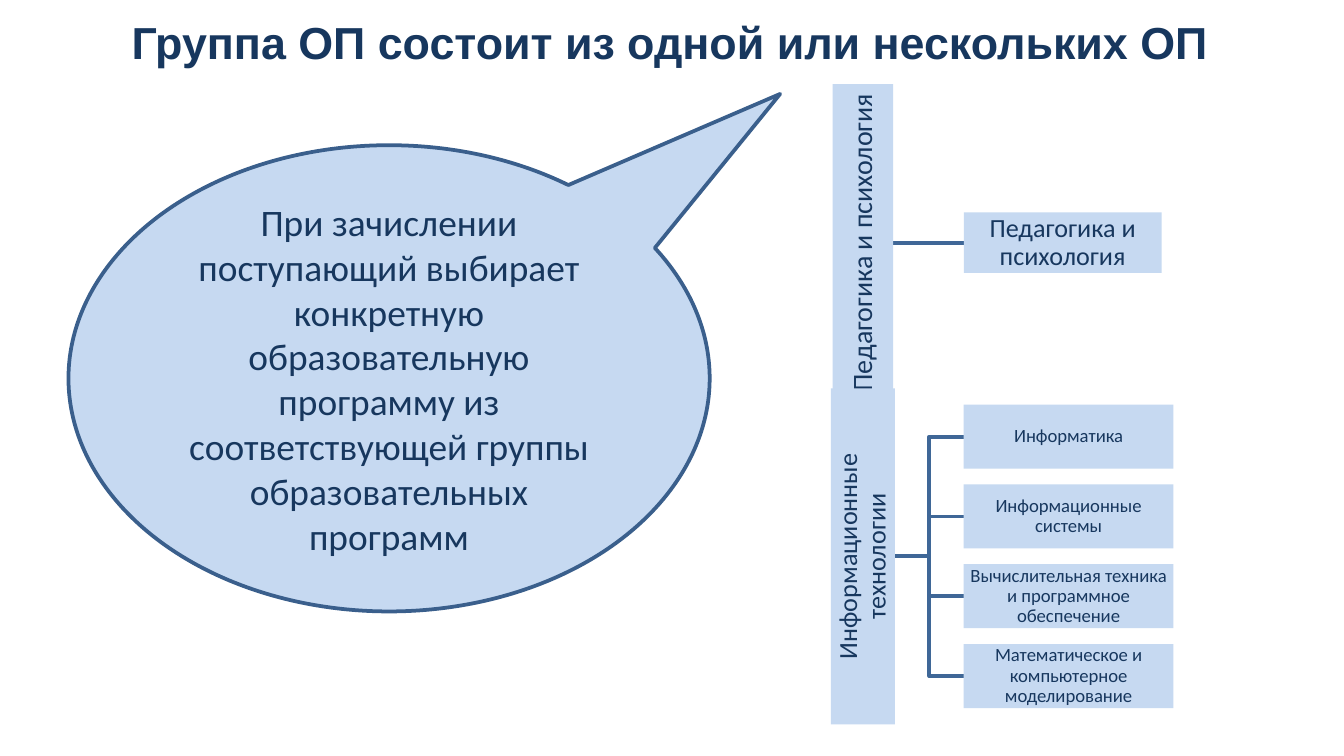
import pptx
import pptx.util
import pptx.dml.color
import pptx.enum.shapes
import pptx.enum.text
import pptx.oxml

Pt = pptx.util.Pt
RGBColor = pptx.dml.color.RGBColor
SHAPE = pptx.enum.shapes.MSO_SHAPE
LINK = pptx.enum.shapes.MSO_CONNECTOR
ALIGN = pptx.enum.text.PP_ALIGN

NAVY = RGBColor(0x17, 0x37, 0x5E)
PALE = RGBColor(0xC6, 0xD9, 0xF1)
WHITE = RGBColor(0xFF, 0xFF, 0xFF)
LINK_BLUE = RGBColor(0x3F, 0x67, 0x97)
OUTLINE = RGBColor(0x3A, 0x5F, 0x8C)

TITLE = "Группа ОП состоит из одной или нескольких ОП"
CALLOUT = ("При зачислении поступающий выбирает конкретную образовательную "
           "программу из соответствующей группы образовательных программ")
GROUPS = [
    {"name": "Педагогика и психология", "size": 15, "length": 170,
     "center": 130, "box": (106, 32.4), "program_size": 14,
     "programs": ["Педагогика и психология"]},
    {"name": "Информационные технологии", "size": 14, "length": 180,
     "center": 298.1, "box": (112.3, 34.3), "program_size": 10,
     "programs": ["Информатика", "Информационные системы",
                  "Вычислительная техника и программное обеспечение",
                  "Математическое и компьютерное моделирование"]},
]
GROUP_X = 462.3
PROGRAM_X = 516.3
PITCH = 42.75


def add_text_shape(s, kind, box, text, size, fill, font="Calibri",
                   insets=(0.7, 0.7), align=ALIGN.CENTER, spacing=1.0):
    sp = s.shapes.add_shape(kind, *map(Pt, box))
    sp.shadow.inherit = False
    sp.fill.solid()
    sp.fill.fore_color.rgb = fill
    sp.line.fill.background()
    tf = sp.text_frame
    tf.word_wrap = True
    tf.vertical_anchor = pptx.enum.text.MSO_ANCHOR.MIDDLE
    tf.margin_left = tf.margin_right = Pt(insets[0])
    tf.margin_top = tf.margin_bottom = Pt(insets[1])
    tf.text = text
    p = tf.paragraphs[0]
    p.alignment = align
    p.line_spacing = spacing
    r = p.runs[0]
    r.font.name = font
    r.font.size = Pt(size)
    r.font.color.rgb = NAVY
    return sp


def add_link(s, x1, y1, x2, y2):
    kind = LINK.STRAIGHT if y1 == y2 else LINK.ELBOW
    cx = s.shapes.add_connector(kind, Pt(x1), Pt(y1), Pt(x2), Pt(y2))
    cx.line.color.rgb = LINK_BLUE
    cx.line.width = Pt(2)
    cx._element.spPr.append(pptx.oxml.parse_xml(
        '<a:effectLst xmlns:a="http://schemas.openxmlformats.org/drawingml/2006/main"/>'))


def add_group(s, group):
    w, h = group["box"]
    length, center = group["length"], group["center"]
    count = len(group["programs"])
    middles = [center + (i - (count - 1) / 2) * PITCH for i in range(count)]
    for y in middles:
        add_link(s, GROUP_X + h / 2, center, PROGRAM_X, y)
    sp = add_text_shape(s, SHAPE.RECTANGLE,
                        (GROUP_X - length / 2, center - h / 2, length, h),
                        group["name"], group["size"], PALE, spacing=0.9)
    sp.rotation = 270
    for name, y in zip(group["programs"], middles):
        add_text_shape(s, SHAPE.RECTANGLE, (PROGRAM_X, y - h / 2, w, h),
                       name, group["program_size"], PALE, spacing=0.9)


def main():
    prs = pptx.Presentation()
    prs.slide_width, prs.slide_height = Pt(720), Pt(405)
    s = prs.slides.add_slide(prs.slide_layouts[6])

    title = add_text_shape(s, SHAPE.RECTANGLE, (65.5, 3, 601, 38), TITLE, 24, WHITE,
                           font="Arial", insets=(5, 3), align=ALIGN.LEFT)
    title.text_frame.paragraphs[0].runs[0].font.bold = True

    for group in GROUPS:
        add_group(s, group)

    callout = add_text_shape(s, SHAPE.OVAL_CALLOUT, (36.7, 77.8, 343.5, 249.8),
                             CALLOUT, 20, PALE, insets=(7.2, 3.6))
    callout.adjustments[0] = 0.61
    callout.adjustments[1] = -0.61
    callout.line.color.rgb = OUTLINE
    callout.line.width = Pt(2)

    prs.save("out.pptx")


if __name__ == "__main__":
    main()
